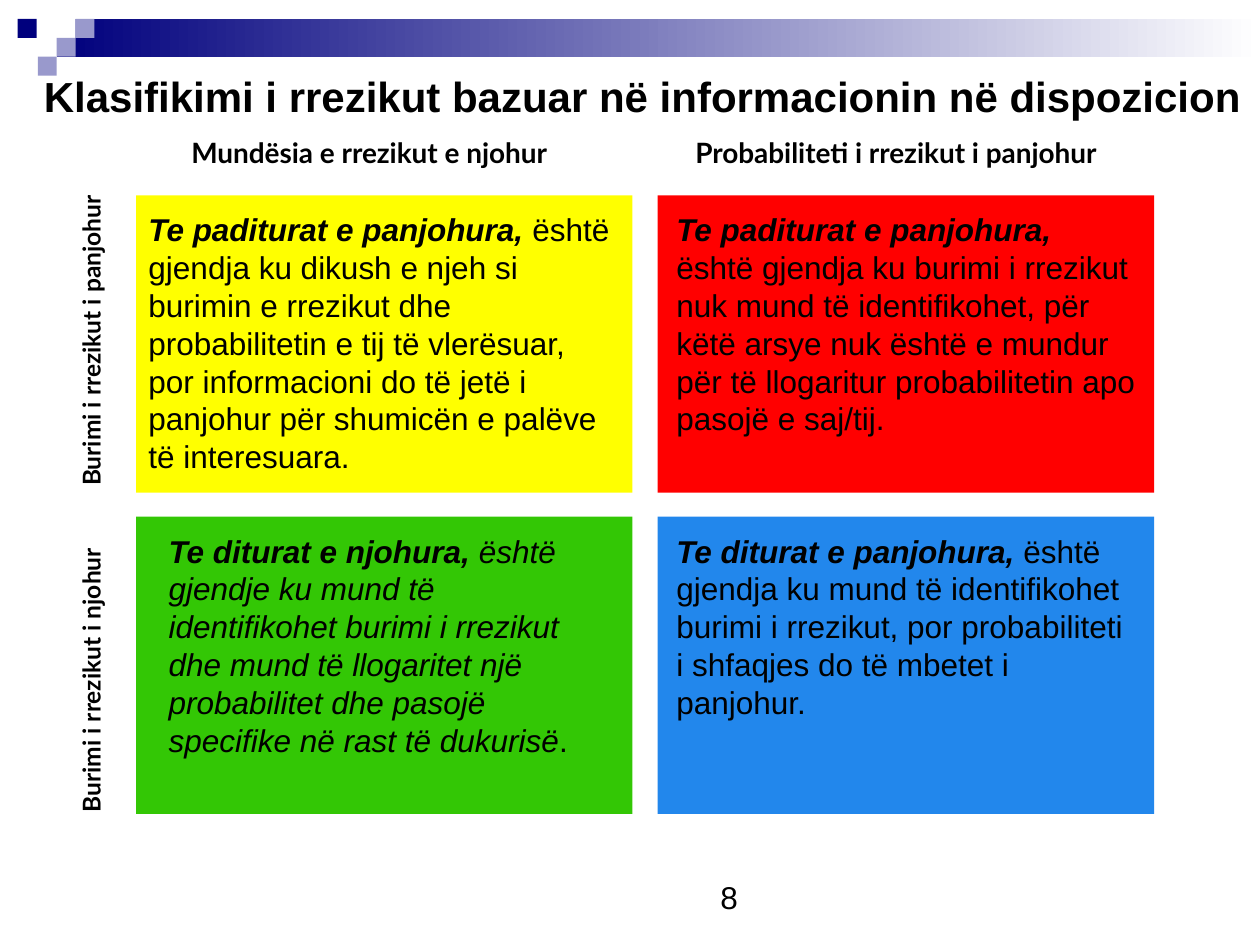
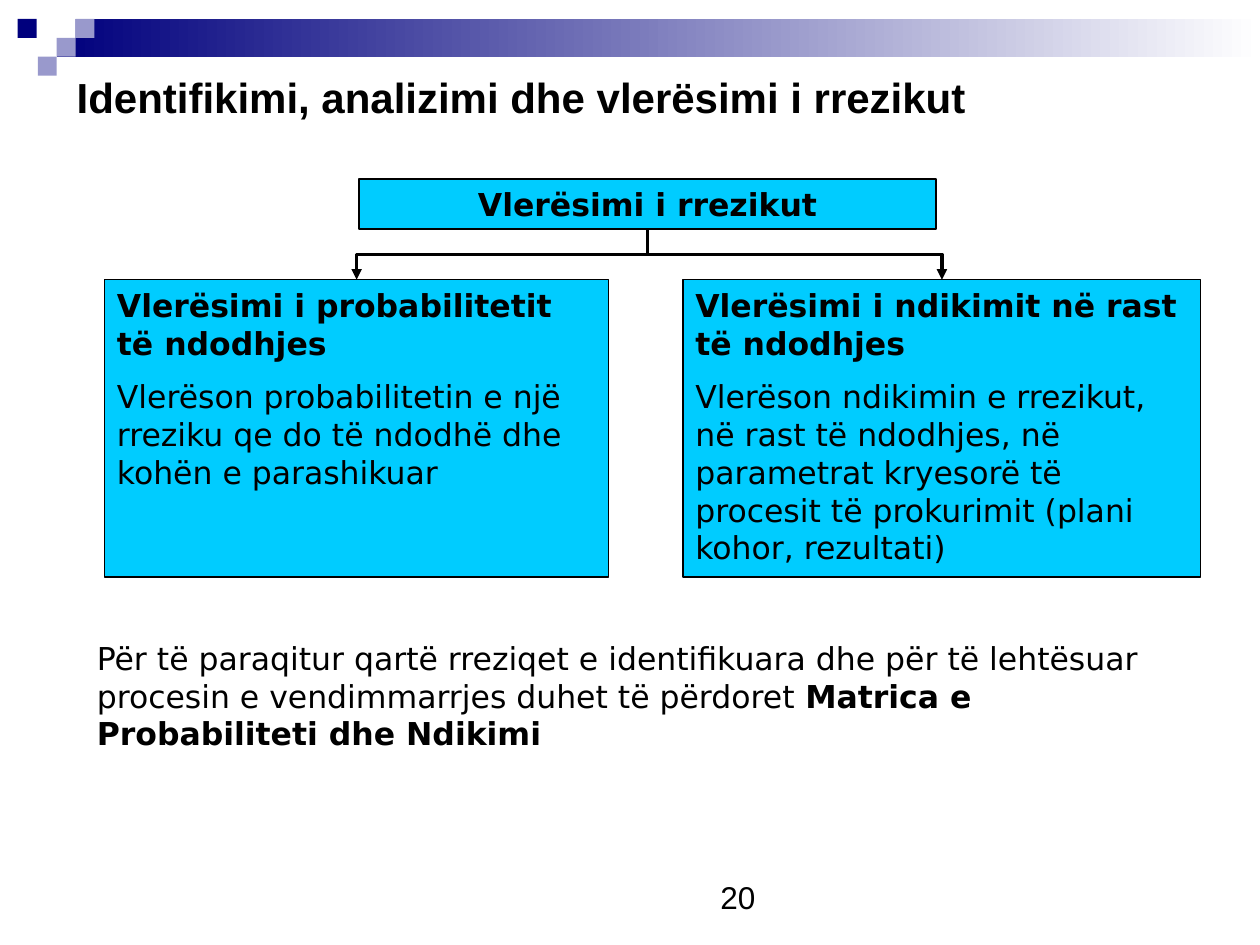
"""Build two slides on risk: a classification grid and an assessment tree."""
from dataclasses import dataclass
from typing import Any

import lxml.etree
import pptx
import pptx.dml.color
import pptx.enum.shapes
import pptx.enum.text
import pptx.oxml.ns
import pptx.util

EMU_PER_PX = 9144
BLACK = pptx.dml.color.RGBColor(0x00, 0x00, 0x00)
WHITE = pptx.dml.color.RGBColor(0xFF, 0xFF, 0xFF)
NAVY = pptx.dml.color.RGBColor(0x00, 0x00, 0x7D)
LAVENDER = pptx.dml.color.RGBColor(0x99, 0x99, 0xCC)
YELLOW = pptx.dml.color.RGBColor(0xFF, 0xFF, 0x00)
RED = pptx.dml.color.RGBColor(0xFF, 0x00, 0x00)
GREEN = pptx.dml.color.RGBColor(0x33, 0xC7, 0x05)
BLUE = pptx.dml.color.RGBColor(0x22, 0x87, 0xEC)
CYAN = pptx.dml.color.RGBColor(0x00, 0xCC, 0xFF)

LEFT = pptx.enum.text.PP_ALIGN.LEFT
CENTER = pptx.enum.text.PP_ALIGN.CENTER
TITLE = {"name": "Arial", "size": pptx.util.Pt(24), "bold": True}
BODY = {"name": "Arial", "size": pptx.util.Pt(18)}
TERM = BODY | {"bold": True, "italic": True}
ITALIC = BODY | {"italic": True}
COLUMN_HEAD = {"name": "Lato", "size": pptx.util.Pt(16), "bold": True}
ROW_HEAD = COLUMN_HEAD | {"size": pptx.util.Pt(14)}
TREE = {"name": "DejaVu Sans", "size": pptx.util.Pt(18)}
TREE_BOLD = TREE | {"bold": True}
FRAME = {
    "word_wrap": True,
    "auto_size": pptx.enum.text.MSO_AUTO_SIZE.NONE,
    "vertical_anchor": pptx.enum.text.MSO_ANCHOR.TOP,
}


@dataclass(frozen=True)
class Area:
    """A place on the page in px."""
    left: int
    top: int
    width: int
    height: int


@dataclass(frozen=True)
class Span:
    """A stretch of text in one format."""
    text: str
    style: dict[str, Any]


@dataclass(frozen=True)
class Quadrant:
    """One cell of the risk grid with its text inset."""
    column: int
    row: int
    color: pptx.dml.color.RGBColor
    inset: int
    text_width: int
    spans: tuple[Span, ...]


@dataclass(frozen=True)
class Node:
    """One box of the assessment tree."""
    area: Area
    line_width: float
    align: Any
    paragraphs: tuple[tuple[Span, ...], ...]


SQUARE = 15
SQUARES = (
    (45, 15, WHITE), (60, 15, LAVENDER), (14, 15, NAVY),
    (45, 30, LAVENDER), (30, 45, LAVENDER),
)
CELL_WIDTH, CELL_HEIGHT = 394, 236
COLUMNS = (108, 522)
ROWS = (155, 410)
QUADRANTS = (
    Quadrant(0, 1, GREEN, 16, 360, (
        Span("Te diturat e njohura, ", TERM),
        Span("është gjendje ku mund të identifikohet burimi i rrezikut dhe mund të "
             "llogaritet një probabilitet dhe pasojë specifike në rast të dukurisë", ITALIC),
        Span(".", BODY))),
    Quadrant(1, 0, RED, 5, 384, (
        Span("Te paditurat e panjohura, ", TERM),
        Span("është gjendja ku burimi i rrezikut nuk mund të identifikohet, për këtë arsye "
             "nuk është e mundur për të llogaritur probabilitetin apo pasojë e saj/tij.", BODY))),
    Quadrant(1, 1, BLUE, 5, 384, (
        Span("Te diturat e panjohura, ", TERM),
        Span("është gjendja ku mund të identifikohet burimi i rrezikut, por probabiliteti "
             "i shfaqjes do të mbetet i panjohur.", BODY))),
    Quadrant(0, 0, YELLOW, 0, 392, (
        Span("Te paditurat e panjohura, ", TERM),
        Span("është gjendja ku dikush e njeh si burimin e rrezikut dhe probabilitetin e tij "
             "të vlerësuar, por informacioni do të jetë i panjohur për shumicën e palëve "
             "të interesuara.", BODY))),
)
COLUMN_HEADS = (
    (Area(142, 103, 325, 37), "Mundësia e rrezikut e njohur"),
    (Area(542, 103, 374, 37), "Probabiliteti i rrezikut i panjohur"),
)
ROW_HEADS = (
    (Area(-62, 244, 269, 34), "Burimi i rrezikut i panjohur"),
    (Area(-51, 514, 247, 34), "Burimi i rrezikut i njohur"),
)
ROOT = Node(Area(285, 142, 458, 40), 1, CENTER,
            ((Span("Vlerësimi i rrezikut", TREE_BOLD),),))
BRANCHES = (
    Node(Area(83, 222, 400, 236), 0.75, LEFT, (
        (Span("Vlerësimi i probabilitetit të ndodhjes", TREE_BOLD),),
        (Span("Vlerëson probabilitetin e një rreziku qe do të ndodhë dhe kohën e "
              "parashikuar", TREE),))),
    Node(Area(542, 222, 411, 236), 0.75, LEFT, (
        (Span("Vlerësimi i ndikimit në rast të ndodhjes", TREE_BOLD),),
        (Span("Vlerëson ndikimin e rrezikut, në rast të ndodhjes, në parametrat kryesorë të "
              "procesit të prokurimit (plani kohor, rezultati)", TREE),))),
)


def px(length: int) -> pptx.util.Emu:
    """Turn px into EMU."""
    return pptx.util.Emu(length * EMU_PER_PX)


def place(area: Area) -> tuple[pptx.util.Emu, ...]:
    """Give an area's four lengths in EMU."""
    return px(area.left), px(area.top), px(area.width), px(area.height)


def apply(target: Any, values: dict[str, Any]) -> None:
    """Set every format value on the target."""
    for name, value in values.items():
        setattr(target, name, value)


def write(shape: Any, paragraphs: tuple[tuple[Span, ...], ...], align: Any = LEFT) -> None:
    """Fill a shape with formatted paragraphs."""
    frame = shape.text_frame
    apply(frame, FRAME)
    for index, spans in enumerate(paragraphs):
        para = frame.add_paragraph() if index else frame.paragraphs[0]
        para.alignment = align
        if index:
            para.space_before = pptx.util.Pt(9)
        for span in spans:
            run = para.add_run()
            run.text = span.text
            apply(run.font, span.style)
            run.font.color.rgb = BLACK


def add_text(page: Any, area: Area, *spans: Span, rotation: int = 0) -> None:
    """Add a one-paragraph text box."""
    box = page.shapes.add_textbox(*place(area))
    box.rotation = rotation
    write(box, (spans,))


def add_rectangle(page: Any, area: Area, color: pptx.dml.color.RGBColor) -> Any:
    """Add a filled rectangle without outline."""
    box = page.shapes.add_shape(pptx.enum.shapes.MSO_SHAPE.RECTANGLE, *place(area))
    box.shadow.inherit = False
    box.fill.solid()
    box.fill.fore_color.rgb = color
    box.line.fill.background()
    return box


def add_page(deck: Any, title: str, title_area: Area, number: int) -> Any:
    """Add a page with the band, squares, title and page number."""
    page = deck.slides.add_slide(deck.slide_layouts[6])
    band = add_rectangle(page, Area(45, 15, 955, 30), NAVY)
    band.fill.gradient()
    band.fill.gradient_angle = 0
    for stop, color in zip(band.fill.gradient_stops, (NAVY, WHITE)):
        stop.color.rgb = color
    for left, top, color in SQUARES:
        add_rectangle(page, Area(left, top, SQUARE, SQUARE), color)
    add_text(page, Area(562, 692, 64, 40), Span(str(number), BODY))
    add_text(page, title_area, Span(title, TITLE))
    return page


def add_quadrant(page: Any, quadrant: Quadrant) -> None:
    """Add a coloured cell and its definition."""
    left, top = COLUMNS[quadrant.column], ROWS[quadrant.row]
    add_rectangle(page, Area(left, top, CELL_WIDTH, CELL_HEIGHT), quadrant.color)
    text_area = Area(left + quadrant.inset, top + 7, quadrant.text_width, 222)
    add_text(page, text_area, *quadrant.spans)


def add_node(page: Any, node: Node) -> Any:
    """Add an outlined box of the tree."""
    box = add_rectangle(page, node.area, CYAN)
    box.line.color.rgb = BLACK
    box.line.width = pptx.util.Pt(node.line_width)
    write(box, node.paragraphs, node.align)
    return box


def add_branch_arrow(page: Any, parent: Any, child: Any) -> None:
    """Join a parent's bottom to a child's top with a bent arrow."""
    start_x, start_y = parent.left + parent.width // 2, parent.top + parent.height
    end_x, end_y = child.left + child.width // 2, child.top
    drop, reach = end_y - start_y, abs(end_x - start_x)
    arrow = page.shapes.add_connector(
        pptx.enum.shapes.MSO_CONNECTOR.ELBOW, start_x, start_y, end_x, end_y)
    arrow.begin_connect(parent, 2)
    arrow.end_connect(child, 0)
    apply(arrow, {
        "left": (start_x + end_x - drop) // 2,
        "top": (start_y + end_y - reach) // 2,
        "width": drop,
        "height": reach,
    })
    goes_right = end_x > start_x
    properties = arrow._element.spPr
    transform = properties.find(pptx.oxml.ns.qn("a:xfrm"))
    transform.set("rot", str((270 if goes_right else 90) * 60000))
    transform.set("flipH", "1" if goes_right else "0")
    transform.set("flipV", "0")
    arrow.line.color.rgb = BLACK
    arrow.line.width = pptx.util.Pt(2)
    outline = properties.find(pptx.oxml.ns.qn("a:ln"))
    lxml.etree.SubElement(outline, pptx.oxml.ns.qn("a:tailEnd"), type="triangle")
    lxml.etree.SubElement(properties, pptx.oxml.ns.qn("a:effectLst"))


def add_classification(deck: Any) -> None:
    """Add the page with the four kinds of risk."""
    page = add_page(deck, "Klasifikimi i rrezikut bazuar në informacionin në dispozicion",
                    Area(25, 51, 1003, 50), 8)
    for quadrant in QUADRANTS:
        add_quadrant(page, quadrant)
    for area, text in COLUMN_HEADS:
        add_text(page, area, Span(text, COLUMN_HEAD))
    for area, text in ROW_HEADS:
        add_text(page, area, Span(text, ROW_HEAD), rotation=270)


def add_assessment(deck: Any) -> None:
    """Add the page with the assessment tree."""
    page = add_page(deck, "Identifikimi, analizimi dhe vlerësimi i rrezikut",
                    Area(51, 52, 732, 50), 20)
    root = add_node(page, ROOT)
    for branch in BRANCHES:
        add_branch_arrow(page, root, add_node(page, branch))
    add_text(page, Area(67, 502, 850, 101),
             Span("Për të paraqitur qartë rreziqet e identifikuara dhe për të lehtësuar "
                  "procesin e vendimmarrjes duhet të përdoret ", TREE),
             Span("Matrica e Probabiliteti dhe Ndikimi", TREE_BOLD))


def main() -> None:
    """Build and save the deck."""
    deck = pptx.Presentation()
    deck.slide_width, deck.slide_height = px(1000), px(750)
    add_classification(deck)
    add_assessment(deck)
    deck.save("out.pptx")


if __name__ == "__main__":
    main()
